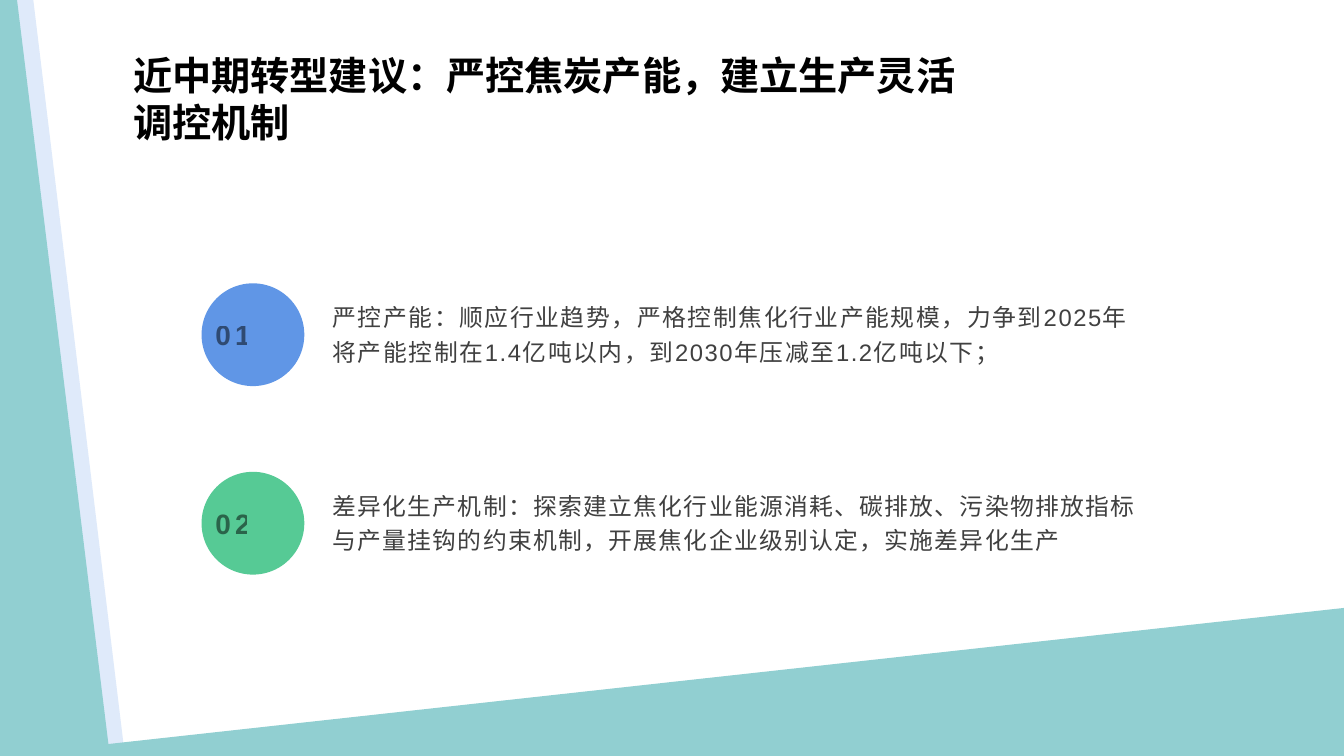
from pptx import Presentation
from pptx.dml.color import RGBColor
from pptx.enum.shapes import MSO_SHAPE
from pptx.enum.text import MSO_ANCHOR, MSO_AUTO_SIZE, PP_ALIGN
from pptx.oxml.ns import qn
from pptx.util import Cm, Pt
from lxml import etree

OVAL = MSO_SHAPE.OVAL
WEDGE = MSO_SHAPE.RIGHT_TRIANGLE
MIDDLE = MSO_ANCHOR.MIDDLE
FIXED = MSO_AUTO_SIZE.NONE
LEFT = PP_ALIGN.LEFT

WIDTH, HEIGHT = 33.87, 19.05
FONT = "Arial"
COLORS = {
    "teal": "91CFD1",
    "pale": "DFEAFA",
    "blue": "6096E6",
    "green": "56CA95",
    "black": "000000",
    "gray": "404040",
}

TITLE = "近中期转型建议：严控焦炭产能，建立生产灵活调控机制"
# disc colour, letter spacing in points, text
ITEMS = [
    ("blue", 1.1, "严控产能：顺应行业趋势，严格控制焦化行业产能规模，"
     "力争到2025年将产能控制在1.4亿吨以内，到2030年压减至1.2亿吨以下；"),
    ("green", 0.9, "差异化生产机制：探索建立焦化行业能源消耗、碳排放、"
     "污染物排放指标与产量挂钩的约束机制，开展焦化企业级别认定，实施差异化生产"),
]
DISC = 2.59
TOP, STEP = 7.14, 4.75


class Deck:
    """Holds the slide being built and its text and fill style."""

    def __init__(self):
        self.file = Presentation()
        self.file.slide_width = Cm(WIDTH)
        self.file.slide_height = Cm(HEIGHT)
        self.slide = self.file.slides.add_slide(self.file.slide_layouts[5])
        self.shapes = self.slide.shapes

    def paint(self, shape, color):
        shape.shadow.inherit = False
        shape.fill.solid()
        shape.fill.fore_color.rgb = RGBColor.from_string(COLORS[color])
        shape.line.fill.background()

    def preset(self, kind, box, color, flip=False):
        shape = self.shapes.add_shape(kind, *map(Cm, box))
        self.paint(shape, color)
        if flip:
            shape.element.spPr.find(qn("a:xfrm")).set("flipH", "1")

    def band(self, left, top, foot, color):
        """Full-height strip whose right edge slants from top to foot."""
        pen = self.shapes.build_freeform(Cm(left), 0)
        pen.add_line_segments([
            (Cm(top), 0), (Cm(foot), Cm(HEIGHT)), (Cm(left), Cm(HEIGHT)),
        ])
        self.paint(pen.convert_to_shape(), color)

    def label(self, shape, text, size, color, bold=False, gap=0, alpha=None):
        """Fill a text shape; gap is letter spacing in points, alpha a percent."""
        frame = shape.text_frame
        frame.text = text
        frame.word_wrap = True
        frame.auto_size = FIXED
        frame.vertical_anchor = MIDDLE
        para = frame.paragraphs[0]
        para.alignment = LEFT
        run = para.runs[0]
        font = run.font
        font.name, font.size, font.bold = FONT, Pt(size), bold
        font.color.rgb = RGBColor.from_string(COLORS[color])
        props = run._r.get_or_add_rPr()
        etree.SubElement(props, qn("a:ea")).set("typeface", FONT)
        if gap:
            props.set("spc", str(round(gap * 100)))
        if alpha:
            tone = props.find(".//" + qn("a:srgbClr"))
            etree.SubElement(tone, qn("a:alpha")).set("val", str(alpha * 1000))
        return para

    def title(self, text, box):
        shape = self.shapes.title
        shape.left, shape.top, shape.width, shape.height = map(Cm, box)
        self.label(shape, text, 28, "black", bold=True)
        frame = shape.text_frame
        frame.margin_left = frame.margin_right = Cm(0.18)
        frame.margin_top = frame.margin_bottom = Cm(0.08)

    def text(self, text, box, *style, **more):
        shape = self.shapes.add_textbox(*map(Cm, box))
        return self.label(shape, text, *style, **more)

    def item(self, num, top, color, gap, text):
        """One numbered disc with its paragraph at the right."""
        self.preset(OVAL, (5.08, top, DISC, DISC), color)
        para = self.text(text, (8.13, top + 0.1, 21.08, 2.24), 17, "gray", gap=gap)
        para.line_spacing = 1.2
        para.space_after = Pt(8)
        self.text(f"{num:02}", (5.18, top, DISC, DISC), 20, "black",
                  bold=True, gap=3, alpha=50)


def main():
    deck = Deck()
    deck.band(0.41, 0.84, 3.15, "pale")
    deck.preset(WEDGE, (0, 15.32, WIDTH, 3.73), "teal", flip=True)
    deck.band(0, 0.43, 2.77, "teal")
    deck.title(TITLE, (3.18, 0.99, 22.02, 2.97))
    for i, entry in enumerate(ITEMS):
        deck.item(i + 1, TOP + i * STEP, *entry)
    deck.file.save("out.pptx")


if __name__ == "__main__":
    main()
